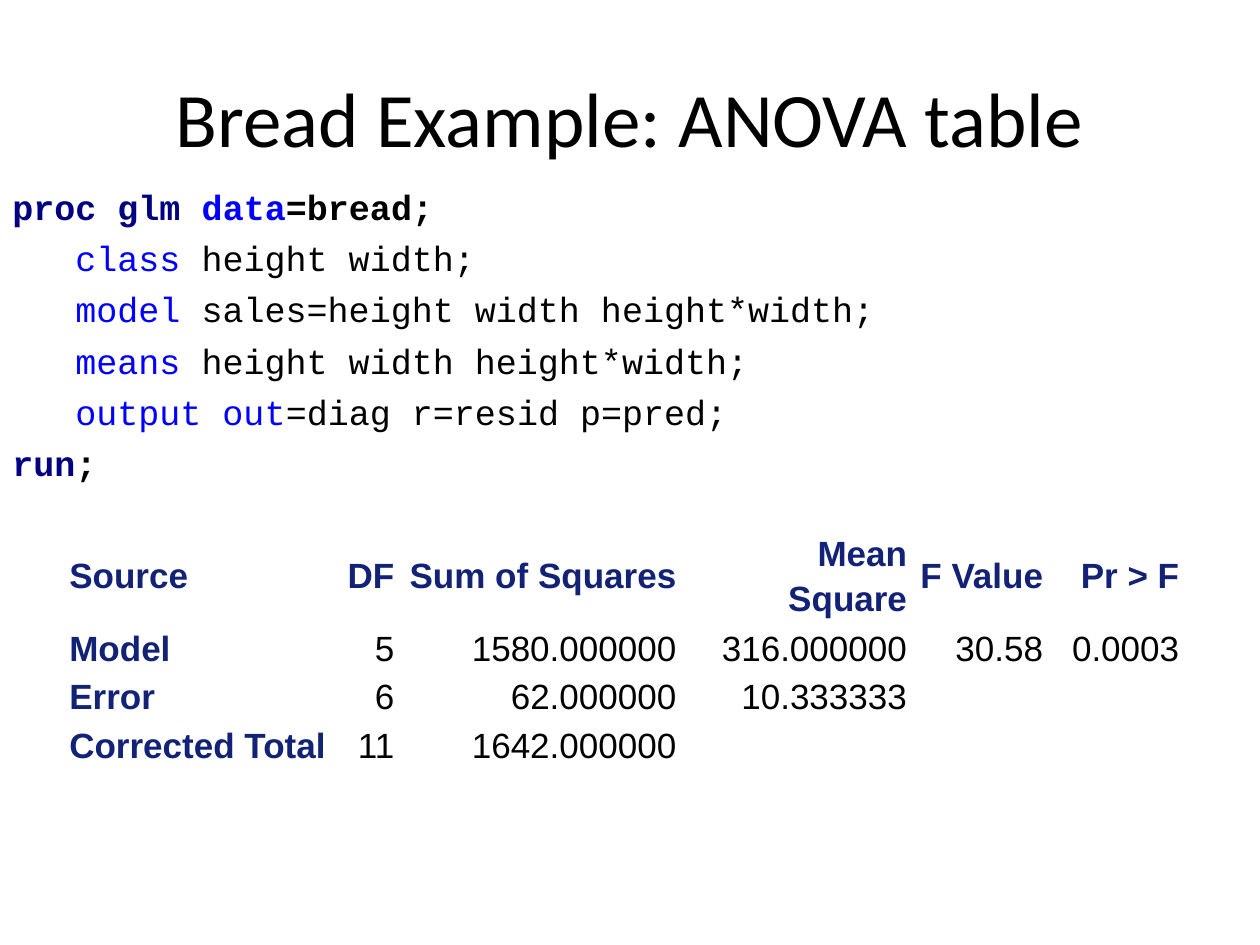
from dataclasses import dataclass
from typing import Optional

from pptx import Presentation
from pptx.dml.color import RGBColor
from pptx.enum.text import MSO_ANCHOR as Anchor, PP_ALIGN as Align
from pptx.util import Inches, Pt


@dataclass(frozen=True)
class Theme:
    black: str = "000000"
    step: str = "000080"
    keyword: str = "0000FF"
    heading: str = "112277"
    title_font: str = "Calibri"
    code_font: str = "Courier New"
    table_font: str = "Arial"
    title_size: float = 44
    text_size: float = 20


@dataclass(frozen=True)
class CodeLine:
    tokens: tuple[tuple[str, str], ...]
    bold: bool = False
    indent: float = 0


@dataclass(frozen=True)
class Column:
    heading: str
    width: float
    values: tuple[str, ...]


THEME = Theme()


def statement(keyword: str, rest: str) -> CodeLine:
    """An indented line inside the proc step."""
    return CodeLine(((keyword, THEME.keyword), (rest, THEME.black)), indent=0.5)


CODE = (
    CodeLine((("proc glm ", THEME.step), ("data", THEME.keyword),
              ("=bread;", THEME.black)), bold=True),
    statement("class", " height width;"),
    statement("model", " sales=height width height*width;"),
    statement("means", " height width height*width;"),
    statement("output out", "=diag r=resid p=pred;"),
    CodeLine((("run", THEME.step), (";", THEME.black)), bold=True),
)

ANOVA = (
    Column("Source", 2.17, ("Model", "Error", "Corrected Total")),
    Column("DF", 0.51, ("5", "6", "11")),
    Column("Sum of Squares", 2.24, ("1580.000000", "62.000000", "1642.000000")),
    Column("Mean Square", 1.83, ("316.000000", "10.333333", "")),
    Column("F Value", 1.08, ("30.58", "", "")),
    Column("Pr > F", 1.08, ("0.0003", "", "")),
)
HEADER_HEIGHT, ROW_HEIGHT = 0.72, 0.36


def add_text(paragraph, text: str, *, font: str, size: float = THEME.text_size,
             color: str = THEME.black, bold: bool = False,
             align: Optional[Align] = None) -> None:
    run = paragraph.add_run()
    run.text = text
    run.font.name = font
    run.font.size = Pt(size)
    run.font.bold = bold
    run.font.color.rgb = RGBColor.from_string(color)
    if align is not None:
        paragraph.alignment = align


def add_frame(slide, left: float, top: float, width: float, height: float,
              anchor: Anchor = Anchor.TOP):
    frame = slide.shapes.add_textbox(
        Inches(left), Inches(top), Inches(width), Inches(height)).text_frame
    frame.word_wrap = True
    frame.vertical_anchor = anchor
    return frame


def add_code(slide, lines: tuple[CodeLine, ...]) -> None:
    frame = add_frame(slide, 0, 1.42, 10, 2.58)
    for number, line in enumerate(lines):
        paragraph = frame.add_paragraph() if number else frame.paragraphs[0]
        paragraph.space_before = Pt(5.3)
        paragraph._p.get_or_add_pPr().set("marL", str(Inches(line.indent)))
        for text, color in line.tokens:
            add_text(paragraph, text, font=THEME.code_font, color=color, bold=line.bold)


def fill_cell(cell, text: str, is_heading: bool, align: Align) -> None:
    cell.fill.background()
    cell.vertical_anchor = Anchor.MIDDLE
    cell.margin_left = cell.margin_right = Inches(0.05)
    cell.margin_top = cell.margin_bottom = 0
    if not text:
        return
    paragraph = cell.text_frame.paragraphs[0]
    paragraph.line_spacing = 1.15
    paragraph.space_before = paragraph.space_after = Pt(5)
    add_text(paragraph, text, font=THEME.table_font, bold=is_heading, align=align,
             color=THEME.heading if is_heading else THEME.black)


def add_anova(slide, columns: tuple[Column, ...]) -> None:
    row_count = 1 + len(columns[0].values)
    height = HEADER_HEIGHT + ROW_HEIGHT * (row_count - 1)
    width = sum(column.width for column in columns)
    table = slide.shapes.add_table(row_count, len(columns), Inches(0.5), Inches(4.17),
                                   Inches(width), Inches(height)).table
    table.first_row = table.horz_banding = False
    for row_index, row in enumerate(table.rows):
        row.height = Inches(ROW_HEIGHT if row_index else HEADER_HEIGHT)
    for col_index, column in enumerate(columns):
        table.columns[col_index].width = Inches(column.width)
        align = Align.RIGHT if col_index else Align.LEFT
        for row_index, text in enumerate((column.heading, *column.values)):
            is_heading = row_index == 0 or col_index == 0
            fill_cell(table.cell(row_index, col_index), text, is_heading, align)


def main() -> None:
    deck = Presentation()
    deck.slide_width, deck.slide_height = Inches(10), Inches(7.5)
    slide = deck.slides.add_slide(deck.slide_layouts[6])
    title = add_frame(slide, 0.5, 0.3, 9, 1.25, Anchor.MIDDLE)
    add_text(title.paragraphs[0], "Bread Example: ANOVA table", font=THEME.title_font,
             size=THEME.title_size, align=Align.CENTER)
    add_code(slide, CODE)
    add_anova(slide, ANOVA)
    deck.save("out.pptx")


if __name__ == "__main__":
    main()
